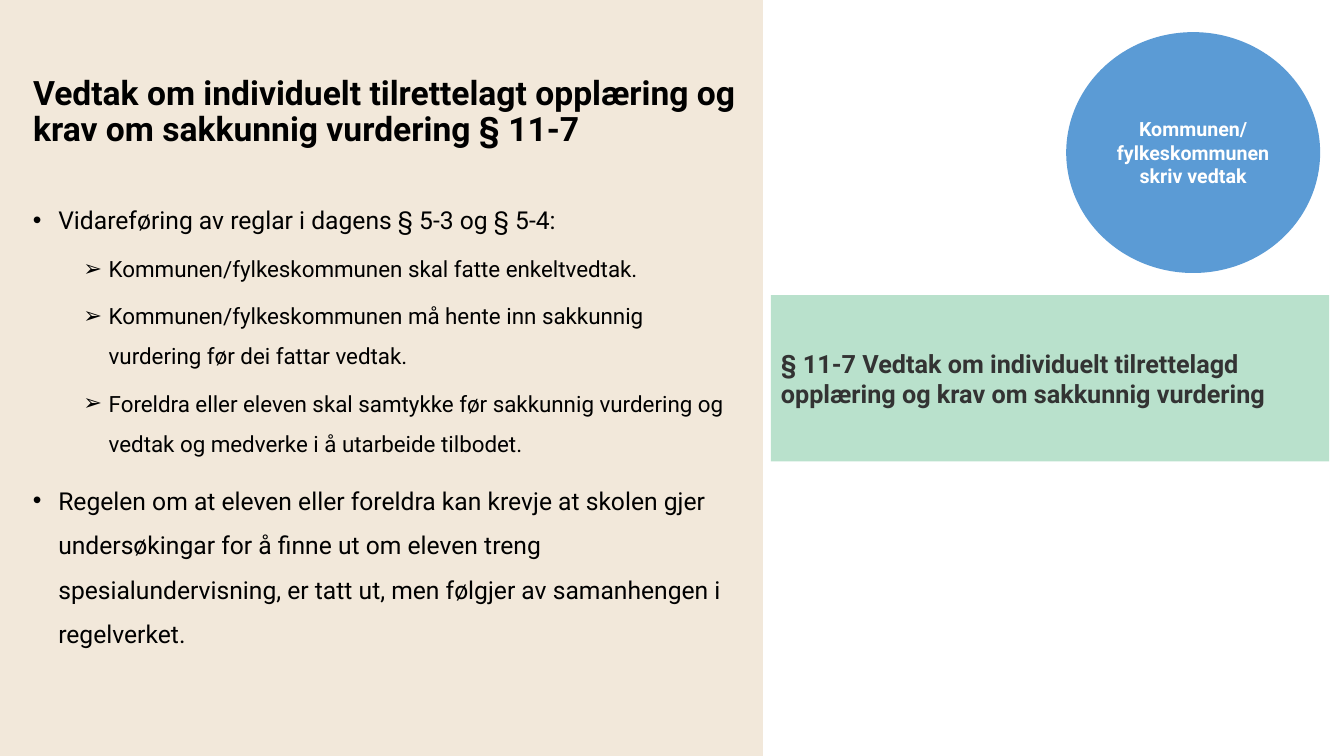
from dataclasses import dataclass

from lxml import etree
from pptx import Presentation
from pptx.dml.color import RGBColor
from pptx.enum.shapes import MSO_SHAPE
from pptx.enum.text import MSO_ANCHOR, MSO_AUTO_SIZE, PP_ALIGN
from pptx.oxml.ns import qn
from pptx.util import Cm, Pt

RECT, CIRCLE = MSO_SHAPE.RECTANGLE, MSO_SHAPE.FLOWCHART_CONNECTOR
LEFT, CENTER = PP_ALIGN.LEFT, PP_ALIGN.CENTER
MIDDLE, TOP = MSO_ANCHOR.MIDDLE, MSO_ANCHOR.TOP
NO_AUTOFIT = MSO_AUTO_SIZE.NONE
TITLE_ONLY = 5


@dataclass(frozen=True)
class Theme:
    font: str = "Roboto"
    black: str = "000000"
    white: str = "FFFFFF"
    dark_grey: str = "333333"
    sand: str = "F2E8DA"
    blue: str = "5B9BD5"
    green: str = "B9E1CC"
    title_size: float = 24
    section_size: float = 18
    circle_size: float = 14


@dataclass(frozen=True)
class Box:
    left: float
    top: float
    width: float
    height: float

    def lengths(self):
        return Cm(self.left), Cm(self.top), Cm(self.width), Cm(self.height)


@dataclass(frozen=True)
class Level:
    bullet: str
    margin: float
    size: float
    space_before: float


@dataclass(frozen=True)
class Item:
    level: Level
    text: str


@dataclass(frozen=True)
class Block:
    kind: MSO_SHAPE
    box: Box
    fill: str
    text: str = ""
    size: float = 18
    color: str = "000000"
    align: PP_ALIGN = LEFT


THEME = Theme()
HANGING = 0.64
POINT = Level("•", 0.64, 17.6, 10)
SUBPOINT = Level("➢", 1.91, 16, 5)

TITLE = "Vedtak om individuelt tilrettelagt opplæring og krav om sakkunnig vurdering § 11-7"
TITLE_BOX = Box(0.58, 0.99, 18.64, 3.68)
BODY_BOX = Box(0.58, 4.67, 18.26, 13.16)
ITEMS = [
    Item(POINT, "Vidareføring av reglar i dagens § 5-3 og § 5-4:"),
    Item(SUBPOINT, "Kommunen/fylkeskommunen skal fatte enkeltvedtak."),
    Item(SUBPOINT, "Kommunen/fylkeskommunen må hente inn sakkunnig vurdering før dei fattar vedtak."),
    Item(SUBPOINT, "Foreldra eller eleven skal samtykke før sakkunnig vurdering og vedtak "
                   "og medverke i å utarbeide tilbodet."),
    Item(POINT, "Regelen om at eleven eller foreldra kan krevje at skolen gjer undersøkingar "
                "for å finne ut om eleven treng spesialundervisning, er tatt ut, "
                "men følgjer av samanhengen i regelverket."),
]
PANEL = Block(RECT, Box(0, 0, 19.23, 19.05), THEME.sand)
CALLOUTS = [
    Block(CIRCLE, Box(26.87, 0.81, 6.4, 6.07), THEME.blue,
          "Kommunen/ fylkeskommunen skriv vedtak", THEME.circle_size, THEME.white, CENTER),
    Block(RECT, Box(19.43, 7.44, 14.07, 4.19), THEME.green,
          "§ 11-7 Vedtak om individuelt tilrettelagd opplæring og krav om sakkunnig vurdering",
          THEME.section_size, THEME.dark_grey),
]


def add_run(p, text: str, size: float, color: str, bold: bool = False) -> None:
    r = p.add_run()
    r.text = text
    r.font.name = THEME.font
    r.font.size = Pt(size)
    r.font.bold = bold
    r.font.color.rgb = RGBColor.from_string(color)


def set_frame(tf, anchor: MSO_ANCHOR) -> None:
    tf.word_wrap = True
    tf.auto_size = NO_AUTOFIT
    tf.vertical_anchor = anchor


def add_block(s, block: Block):
    sp = s.shapes.add_shape(block.kind, *block.box.lengths())
    sp.shadow.inherit = False
    sp.fill.solid()
    sp.fill.fore_color.rgb = RGBColor.from_string(block.fill)
    sp.line.fill.background()
    if block.text:
        set_frame(sp.text_frame, MIDDLE)
        p = sp.text_frame.paragraphs[0]
        p.alignment = block.align
        add_run(p, block.text, block.size, block.color, bold=True)
    return sp


def format_title(title) -> None:
    title.left, title.top, title.width, title.height = TITLE_BOX.lengths()
    set_frame(title.text_frame, MIDDLE)
    p = title.text_frame.paragraphs[0]
    p.alignment = LEFT
    p.line_spacing = 0.9
    add_run(p, TITLE, THEME.title_size, THEME.black, bold=True)


def set_bullet(p, level: Level) -> None:
    pPr = p._p.get_or_add_pPr()
    pPr.set("marL", str(Cm(level.margin)))
    pPr.set("indent", str(-Cm(HANGING)))
    etree.SubElement(pPr, qn("a:buFont")).set("typeface", "Arial")
    etree.SubElement(pPr, qn("a:buChar")).set("char", level.bullet)


def add_body(s) -> None:
    tf = s.shapes.add_textbox(*BODY_BOX.lengths()).text_frame
    set_frame(tf, TOP)
    for i, item in enumerate(ITEMS):
        p = tf.add_paragraph() if i else tf.paragraphs[0]
        set_bullet(p, item.level)
        p.line_spacing = 1.5
        p.space_before = Pt(item.level.space_before if i else 0)
        add_run(p, item.text, item.level.size, THEME.black)


def main() -> None:
    prs = Presentation()
    prs.slide_width, prs.slide_height = Cm(33.87), Cm(19.05)
    s = prs.slides.add_slide(prs.slide_layouts[TITLE_ONLY])
    title = s.shapes.title
    format_title(title)
    # The panel lies behind the title
    title.element.addprevious(add_block(s, PANEL).element)
    add_body(s)
    for callout in CALLOUTS:
        add_block(s, callout)
    prs.save("out.pptx")


if __name__ == "__main__":
    main()
